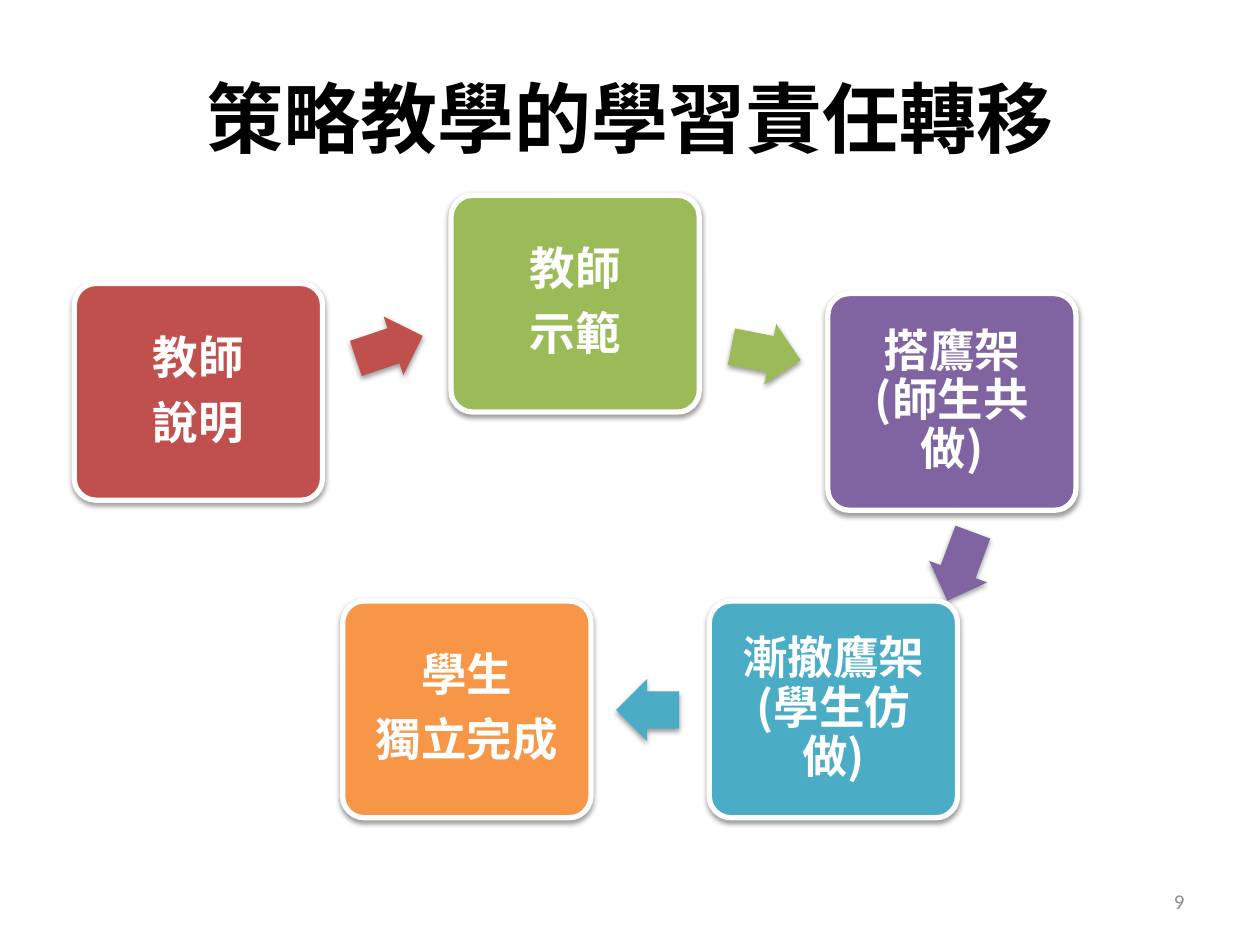
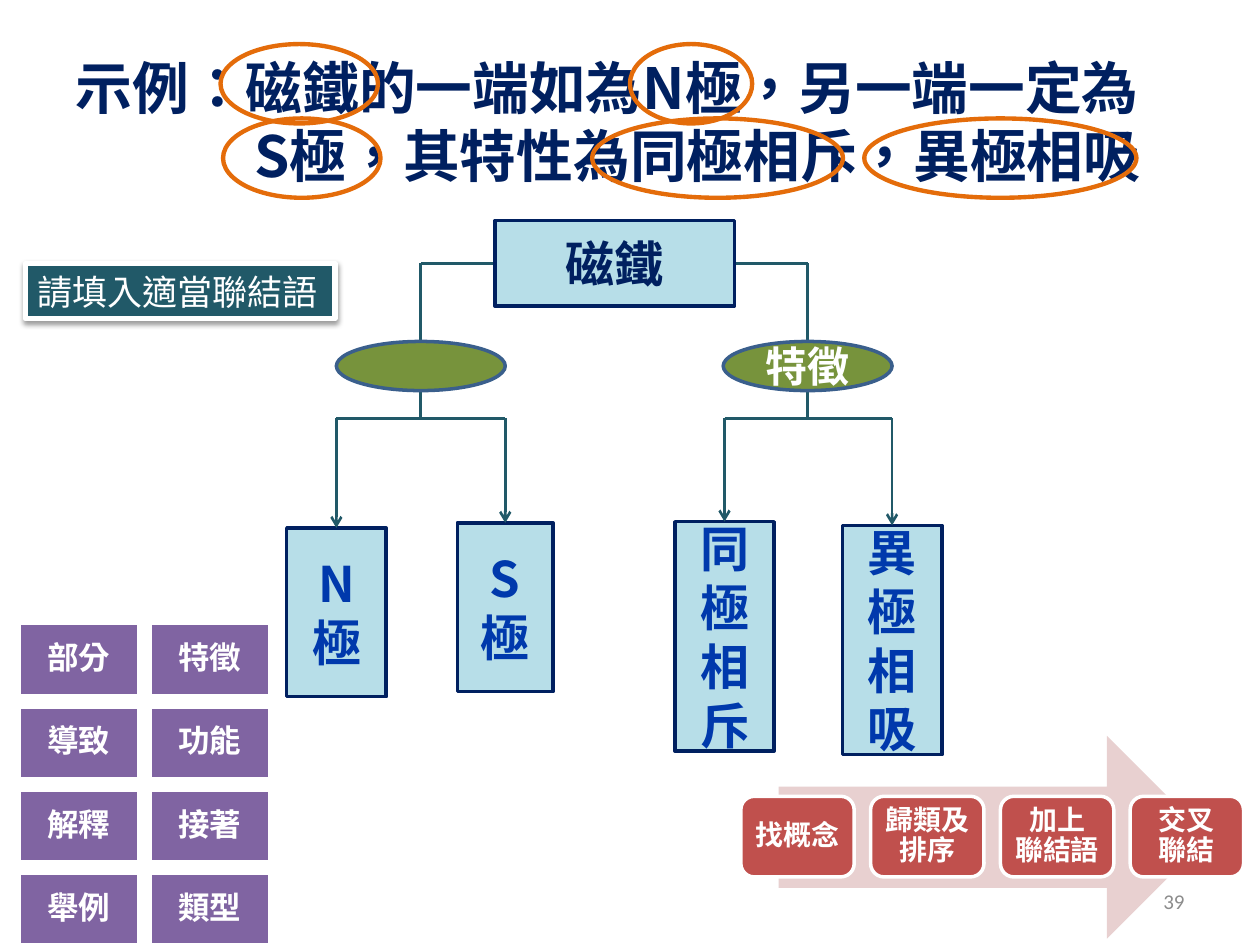
from lxml import etree
from pptx import Presentation
from pptx import util as u
from pptx.dml.color import RGBColor
from pptx.enum import shapes as sh, text as tx
from pptx.oxml.ns import qn

THEME = {
    "font": "Noto Sans CJK SC", "number_font": "Calibri",
    "white": "FFFFFF", "black": "000000", "navy": "002060", "blue": "0039AC",
    "red": "C0504D", "green": "9BBB59", "purple": "8064A2", "aqua": "4BACC6",
    "orange": "F79646", "pale_red": "E8D0D0", "pale_aqua": "B7DEE8",
    "teal": "215968", "olive": "77933C", "steel": "3A5F8C", "ring": "E46C0A",
    "gray": "8C8C8C",
    "title": 44, "example_title": 32.4, "stage": 26, "concept": 28, "link": 24,
    "prompt": 20, "word": 18, "step": 16, "number": 12,
    "single": 1.0, "tight": 0.9,
}
CENTER, LEFT, RIGHT = tx.PP_ALIGN.CENTER, tx.PP_ALIGN.LEFT, tx.PP_ALIGN.RIGHT
SHAPE = sh.MSO_SHAPE


def write(holder, content, size, color="white", align=CENTER, bold=True, font="font",
          inset=(0.1, 0.05), spacing="single", gap=0, wrap=True,
          anchor=tx.MSO_ANCHOR.MIDDLE):
    frame = holder.text_frame
    frame.text = content
    across, down = map(u.Inches, inset)
    frame_format = {"auto_size": tx.MSO_AUTO_SIZE.NONE, "word_wrap": wrap,
                    "vertical_anchor": anchor, "margin_left": across,
                    "margin_right": across, "margin_top": down, "margin_bottom": down}
    for name, value in frame_format.items():
        setattr(frame, name, value)
    for order, paragraph in enumerate(frame.paragraphs):
        paragraph_format = {"alignment": align, "line_spacing": THEME[spacing],
                            "space_before": u.Pt(gap if order else 0)}
        for name, value in paragraph_format.items():
            setattr(paragraph, name, value)
        for run in paragraph.runs:
            run_format = {"name": THEME[font], "size": u.Pt(THEME[size]), "bold": bold}
            for name, value in run_format.items():
                setattr(run.font, name, value)
            run.font.color.rgb = RGBColor.from_string(THEME[color])
            properties = run._r.get_or_add_rPr()
            properties.set("lang", "zh-TW")
            etree.SubElement(properties, qn("a:ea"), typeface=THEME[font])


def block(slide, kind, at, fill=None, line=None, weight=2, shadow=False):
    part = slide.shapes.add_shape(kind, *map(u.Inches, at))
    part.shadow.inherit = False
    if fill:
        part.fill.solid()
        part.fill.fore_color.rgb = RGBColor.from_string(THEME[fill])
    else:
        part.fill.background()
    if line:
        part.line.color.rgb = RGBColor.from_string(THEME[line])
        part.line.width = u.Pt(weight)
    else:
        part.line.fill.background()
    if shadow:
        effects = part._element.spPr.find(qn("a:effectLst"))
        outer = etree.SubElement(effects, qn("a:outerShdw"), blurRad=str(u.Pt(3.1)),
                                 dist=str(u.Pt(1.6)), dir="5400000", rotWithShape="0")
        shade = etree.SubElement(outer, qn("a:srgbClr"), val=THEME["black"])
        etree.SubElement(shade, qn("a:alpha"), val="38000")
    return part


deck = Presentation()
deck.slide_width, deck.slide_height = u.Inches(10), u.Inches(7.5)

headings = [
    ("策略教學的學習責任轉移", "9",
     {"size": "title", "color": "black"}),
    ("示例：磁鐵的一端如為N極，另一端一定為\nS極，其特性為同極相斥，異極相吸", "39",
     {"size": "example_title", "color": "navy", "align": LEFT,
      "anchor": tx.MSO_ANCHOR.BOTTOM}),
]
for heading, number, style in headings:
    slide = deck.slides.add_slide(deck.slide_layouts[5])
    title = slide.shapes.title
    for name, value in zip(("left", "top", "width", "height"), (0.5, 0.3, 9, 1.25)):
        setattr(title, name, u.Inches(value))
    write(title, heading, **style)
    page = slide.shapes.add_textbox(*map(u.Inches, (7.17, 6.95, 2.33, 0.4)))
    write(page, number, "number", "gray", RIGHT, bold=False, font="number_font")

transfer, example = deck.slides
second_line = example.shapes.title.text_frame.paragraphs[1]._p.get_or_add_pPr()
second_line.set("marL", str(u.Inches(1.42)))
second_line.set("indent", "0")

stages = [
    ("教師\n說明", "red", 0.59, 2.25, (2.81, 2.51, 0.56, 0.49), 341.4),
    ("教師\n示範", "green", 3.58, 1.55, (5.8, 2.56, 0.56, 0.49), 11.1),
    ("搭鷹架\v(師生共做)", "purple", 6.57, 2.33, (7.33, 4.25, 0.58, 0.49), 110.4),
    ("漸撤鷹架\v(學生仿做)", "aqua", 5.63, 4.77, (4.89, 5.39, 0.5, 0.49), 180),
    ("學生\n獨立完成", "orange", 2.72, 4.77, None, 0),
]
for label, color, left, top, arrow_at, angle in stages:
    stage = block(transfer, SHAPE.ROUNDED_RECTANGLE, (left, top, 1.97, 1.72),
                  color, "white", 3, shadow=True)
    stage.adjustments[0] = 0.1
    write(stage, label, "stage", inset=(0.11, 0.11), spacing="tight", gap=9)
    if arrow_at:
        handover = block(transfer, SHAPE.RIGHT_ARROW, arrow_at, color, shadow=True)
        handover.adjustments[0] = 0.6
        handover.rotation = angle

link_words = ["部分", "特徵", "導致", "功能", "解釋", "接著", "舉例", "類型"]
for order, word in enumerate(link_words):
    row, column = divmod(order, 2)
    card = block(example, SHAPE.RECTANGLE,
                 (0.15 + 1.04 * column, 4.95 + 0.66 * row, 0.95, 0.57), "purple", "white")
    write(card, word, "word", inset=(0.07, 0.07), spacing="tight")

block(example, SHAPE.RIGHT_ARROW, (6.18, 5.84, 3.41, 1.61), "pale_red")
for order, step in enumerate(["找概念", "歸類及排序", "加上\v聯結語", "交叉\v聯結"]):
    step_card = block(example, SHAPE.ROUNDED_RECTANGLE,
                      (5.88 + 1.03 * order, 6.32, 0.9, 0.64), "red", "white")
    write(step_card, step, "step", inset=(0.07, 0.07), spacing="tight")

root_y, fork_y = 2.09, 3.32
branches = [
    (3.34, "", [("N\n極", 2.67, 4.19, 0.79, 1.34), ("S\n極", 4.01, 4.15, 0.76, 1.34)]),
    (6.41, "特徵", [("同\n極\n相\n斥", 5.75, 4.14, 0.79, 1.82),
                  ("異\n極\n相\n吸", 7.08, 4.17, 0.79, 1.82)]),
]
paths = [((3.34, root_y), (6.41, root_y), None)]
for center, link, concepts in branches:
    paths.append(((center, root_y), (center, fork_y), None))
    paths.append(((concepts[0][1], fork_y), (concepts[1][1], fork_y), None))
    for concept, middle, top, width, height in concepts:
        box = block(example, SHAPE.RECTANGLE, (middle - width / 2, top, width, height),
                    "pale_aqua", "navy")
        write(box, concept, "concept", "blue", wrap=False)
        paths.append(((middle, fork_y), (middle, top), box))

for start, end, target in paths:
    branch_line = example.shapes.add_connector(
        sh.MSO_CONNECTOR.STRAIGHT, *map(u.Inches, start + end))
    branch_line.line.color.rgb = RGBColor.from_string(THEME["teal"])
    branch_line.line.width = u.Pt(1.5)
    properties = branch_line._element.spPr
    etree.SubElement(properties, qn("a:effectLst"))
    if target:
        branch_line.end_connect(target, 0)
        etree.SubElement(properties.find(qn("a:ln")), qn("a:tailEnd"), type="arrow")

for center, link, concepts in branches:
    link_oval = block(example, SHAPE.OVAL, (center - 0.67, 2.71, 1.34, 0.39),
                      "olive", "steel")
    if link:
        write(link_oval, link, "link")

root = block(example, SHAPE.RECTANGLE, (3.93, 1.75, 1.9, 0.68), "pale_aqua", "navy")
write(root, "磁鐵", "concept", "navy", wrap=False)

for left, top, width in [(1.75, 0.35, 1.25), (5, 0.35, 0.97), (1.77, 0.94, 1.25),
                         (4.7, 0.94, 1.99), (6.86, 0.94, 2.16)]:
    block(example, SHAPE.OVAL, (left, top, width, 0.63), line="ring", weight=2.5)

prompt = block(example, SHAPE.RECTANGLE, (0.2, 2.09, 2.46, 0.44), "teal", "white", 3,
               shadow=True)
write(prompt, "請填入適當聯結語", "prompt", align=LEFT, bold=False)

deck.save("out.pptx")
